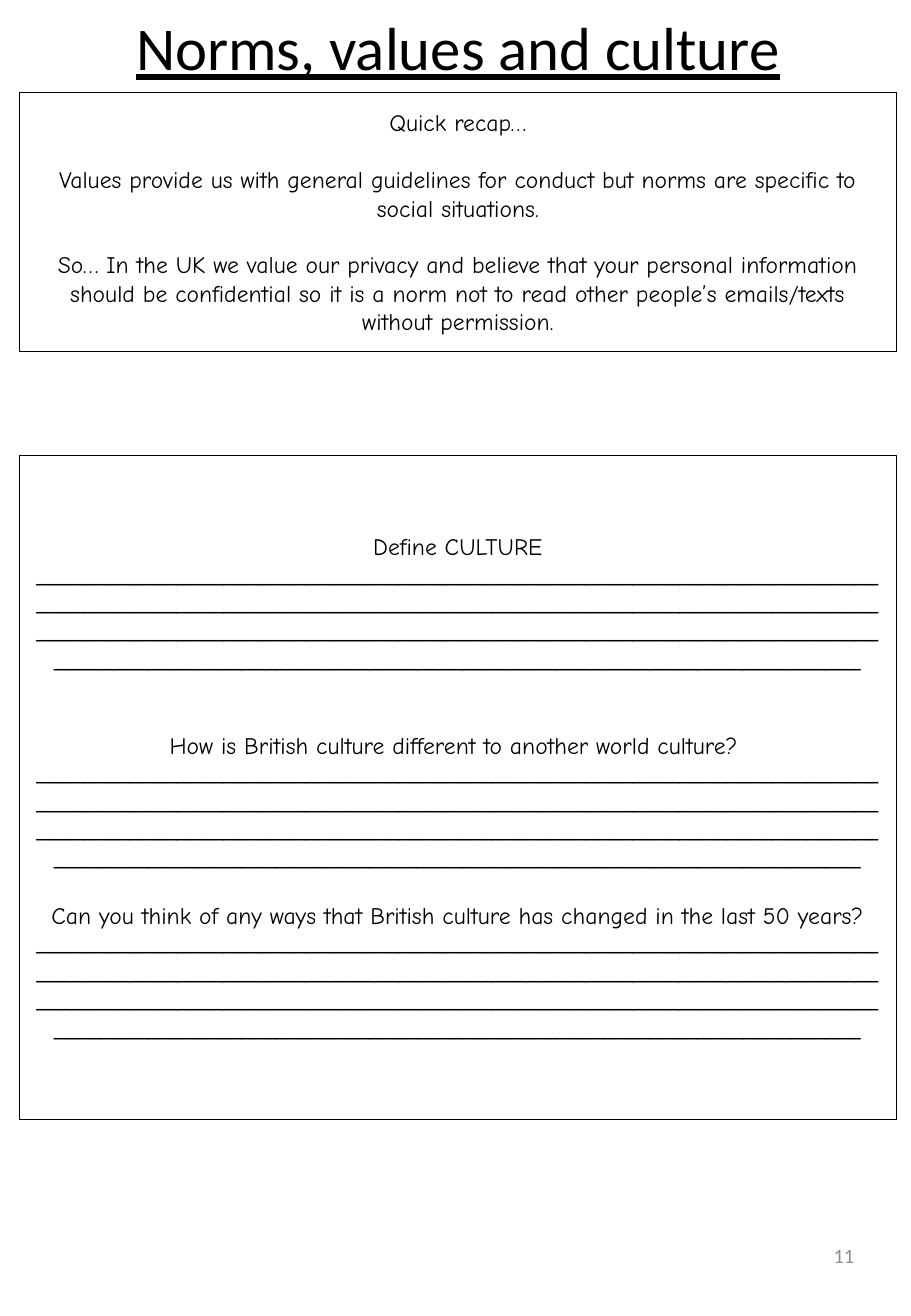
"""Build a worksheet page on norms, values and culture."""
from dataclasses import dataclass

from pptx import Presentation
from pptx import util as u
from pptx.dml.color import RGBColor
from pptx.enum import shapes, text
from pptx.slide import Slide
from pptx.text.text import TextFrame

BLACK = RGBColor(0x00, 0x00, 0x00)
WHITE = RGBColor(0xFF, 0xFF, 0xFF)
GREY = RGBColor(0x8C, 0x8C, 0x8C)
WIDTH, HEIGHT = u.Inches(7.5), u.Inches(10.83)
BLANK_LINE = 16.8
ANSWER_LINES = "_" * 285


@dataclass(frozen=True)
class Area:
    """Position and size in percent of the slide."""
    left: float
    top: float
    width: float
    height: float

    def lengths(self) -> tuple[int, int, int, int]:
        """Return left, top, width and height as slide lengths."""
        return (int(WIDTH * self.left / 100), int(HEIGHT * self.top / 100),
                int(WIDTH * self.width / 100), int(HEIGHT * self.height / 100))


@dataclass(frozen=True)
class Style:
    """Look of a block of text."""
    font: str
    size: int
    color: RGBColor = BLACK
    underline: bool = False
    align: text.PP_ALIGN = text.PP_ALIGN.CENTER


@dataclass(frozen=True)
class Line:
    """A paragraph and the number of lines left open above it."""
    wording: str
    gap: int = 0


@dataclass(frozen=True)
class Block:
    """Text in an area, with or without a frame."""
    area: Area
    style: Style
    lines: tuple[Line, ...]
    framed: bool = False


BODY = Style("Comic Neue", 14)
BLOCKS = (
    Block(Area(71.73, 92.71, 23.33, 5.36),
          Style("Calibri", 12, GREY, align=text.PP_ALIGN.RIGHT), (Line("11"),)),
    Block(Area(0.4, -0.37, 99.73, 7.76),
          Style("Calibri", 36, underline=True), (Line("Norms, values and culture"),)),
    Block(Area(2.13, 7.02, 96.27, 19.67), BODY, (
        Line("Quick recap…"),
        Line("Values provide us with general guidelines for conduct but norms are "
             "specific to social situations.", 1),
        Line("So… In the UK we value our privacy and believe that your personal "
             "information should be confidential so it is a norm not to read other "
             "people’s emails/texts without permission.", 1),
    ), True),
    Block(Area(2.13, 34.63, 96.27, 50.42), BODY, (
        Line(f"Define CULTURE {ANSWER_LINES}"),
        Line("How is British culture different to another world culture? ", 2),
        Line(ANSWER_LINES),
        Line("Can you think of any ways that British culture has changed in the "
             f"last 50 years? {ANSWER_LINES}", 1),
    ), True),
)


def write_lines(frame: TextFrame, block: Block) -> None:
    """Fill a text frame with the paragraphs of a block."""
    frame.word_wrap = True
    frame.vertical_anchor = text.MSO_ANCHOR.MIDDLE
    for index, line in enumerate(block.lines):
        paragraph = frame.add_paragraph() if index else frame.paragraphs[0]
        paragraph.text = line.wording
        paragraph.alignment = block.style.align
        paragraph.space_before = u.Pt(line.gap * BLANK_LINE)
        paragraph.font.name = block.style.font
        paragraph.font.size = u.Pt(block.style.size)
        paragraph.font.underline = block.style.underline
        paragraph.font.color.rgb = block.style.color


def draw_block(slide: Slide, block: Block) -> None:
    """Draw a block as a framed rectangle or a plain text box."""
    if block.framed:
        shape = slide.shapes.add_shape(shapes.MSO_SHAPE.RECTANGLE, *block.area.lengths())
        shape.shadow.inherit = False
        shape.fill.solid()
        shape.fill.fore_color.rgb = WHITE
        shape.line.color.rgb = BLACK
        shape.line.width = u.Pt(0.75)
    else:
        shape = slide.shapes.add_textbox(*block.area.lengths())
    write_lines(shape.text_frame, block)


def main() -> None:
    """Create and save the presentation."""
    presentation = Presentation()
    presentation.slide_width, presentation.slide_height = WIDTH, HEIGHT
    slide = presentation.slides.add_slide(presentation.slide_layouts[6])
    for block in BLOCKS:
        draw_block(slide, block)
    presentation.save("out.pptx")


if __name__ == "__main__":
    main()
